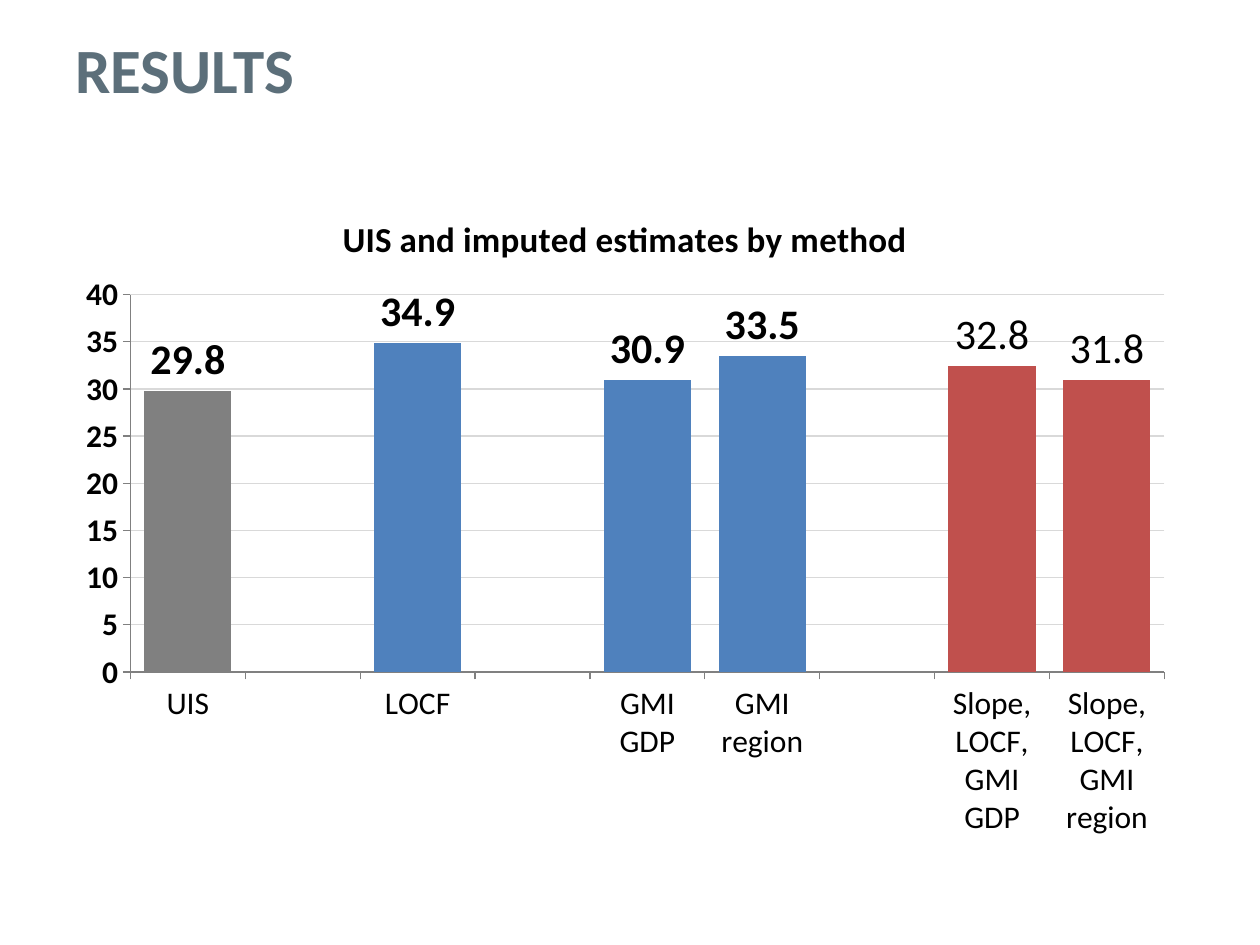
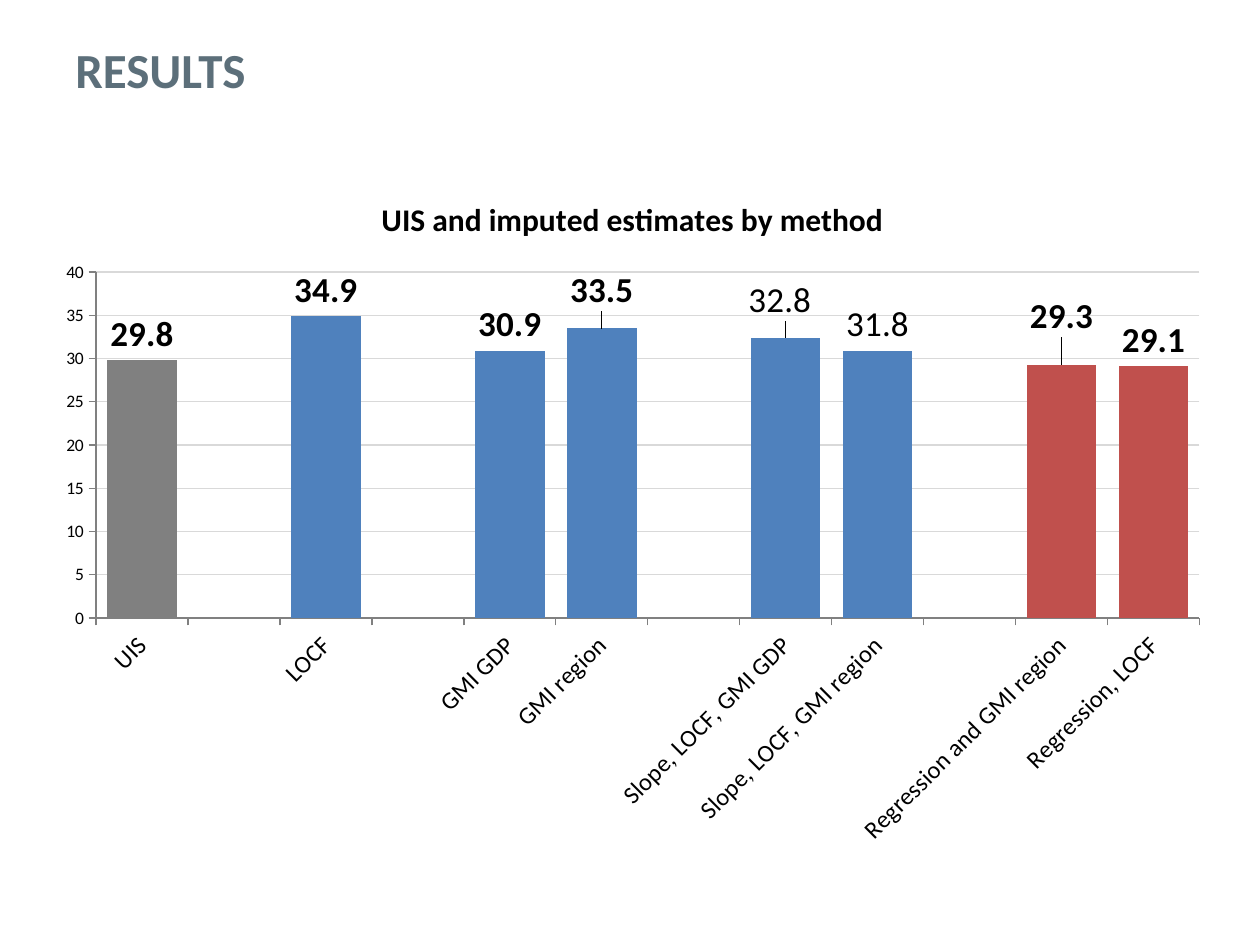
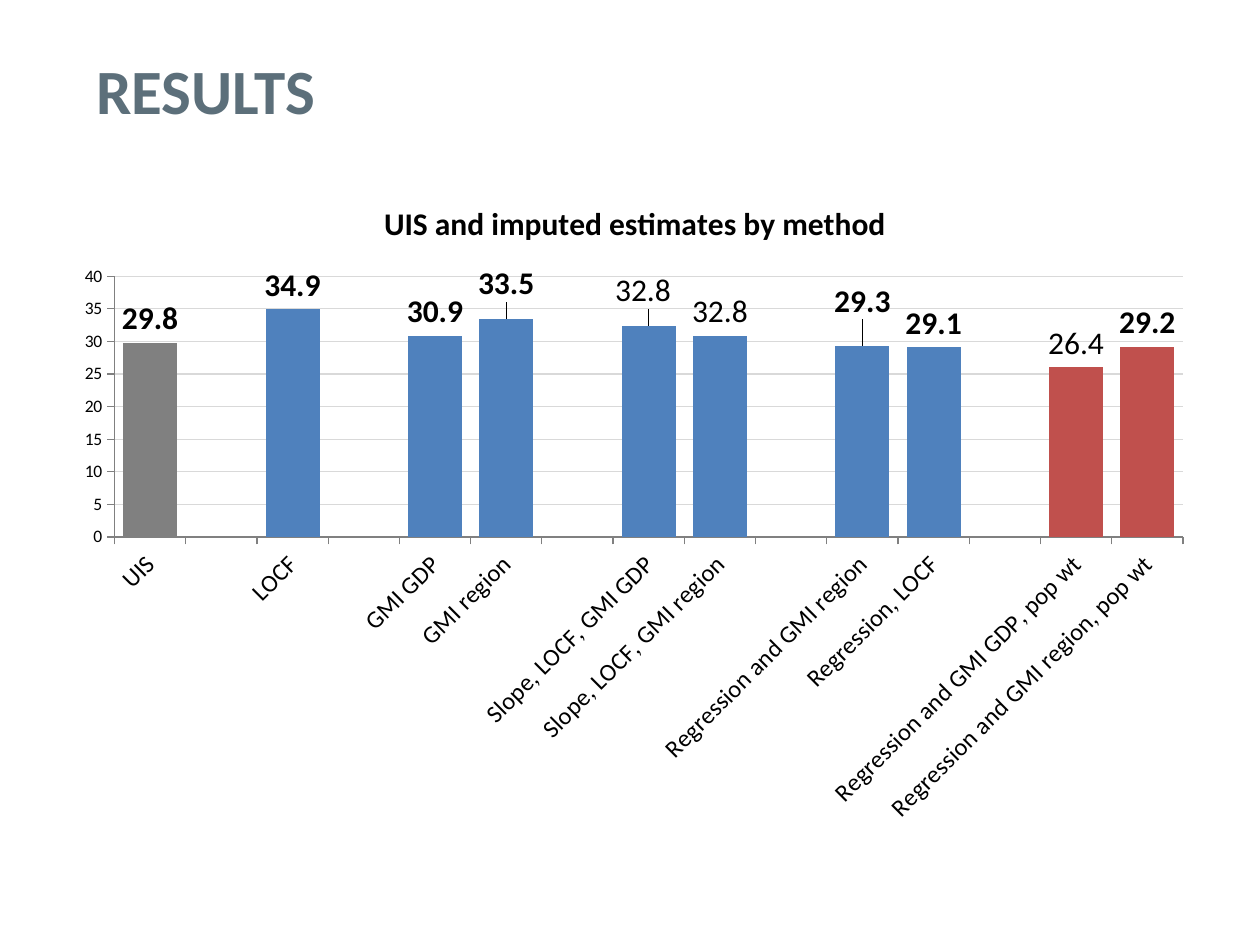
import dataclasses

import lxml.etree
import pptx
import pptx.chart.data
import pptx.dml.color
import pptx.enum.chart
import pptx.enum.text
import pptx.oxml.ns
import pptx.util


@dataclasses.dataclass(frozen=True)
class Theme:
    face: str = "Calibri"
    ink: str = "000000"
    head: str = "5C6F7A"
    grid: str = "D9D9D9"
    axis: str = "808080"
    base: str = "808080"
    bar: str = "4F81BD"
    new: str = "C0504D"
    small: int = 10
    cat: int = 14
    wide: int = 18
    big: int = 20
    mark: int = 24
    sub: int = 28
    top: int = 36


theme = Theme()
PX = 914400 / 126
RGB = pptx.dml.color.RGBColor.from_string


def style(font, size, bold=False, color=theme.ink):
    form = {"name": theme.face, "size": pptx.util.Pt(size), "bold": bold}
    for key, val in form.items():
        setattr(font, key, val)
    font.color.rgb = RGB(color)


def place(node, spot, form):
    """Insert a manual chart layout as child number spot of node."""
    qn = pptx.oxml.ns.qn
    for old in node.findall(qn("c:layout")):
        node.remove(old)
    outer = lxml.etree.Element(qn("c:layout"))
    inner = lxml.etree.SubElement(outer, qn("c:manualLayout"))
    for key, val in form.items():
        lxml.etree.SubElement(inner, qn(f"c:{key}")).set("val", str(val))
    node.insert(spot, outer)


bars = [
    ("UIS", 29.8), ("", None),
    ("LOCF", 34.9), ("", None),
    ("GMI GDP", 30.9), ("GMI region", 33.5), ("", None),
    ("Slope, LOCF, GMI GDP", 32.4), ("Slope, LOCF, GMI region", 30.9), ("", None),
    ("Regression and GMI region", 29.3), ("Regression, LOCF", 29.1), ("", None),
    ("Regression and GMI GDP, pop wt", 26), ("Regression and GMI region, pop wt", 29.2),
]
lifts = {5: (0, -0.017), 7: (-0.005, -0.017), 10: (0, -0.032)}

# box and plot are left, top, width, height in px
slides = [
    {"count": 9, "head": (63, 0), "size": theme.top, "box": (63, 188, 1124, 663),
     "plot": (130, 295, 1034, 377), "title": theme.big, "cat": theme.wide,
     "val": theme.wide, "bold": True, "mark": theme.mark, "turn": 0,
     "texts": {7: "32.8", 8: "31.8"}, "lifts": {}},
    {"count": 12, "head": (63, 0), "size": theme.sub, "box": (43, 171, 1179, 688),
     "plot": (96, 272, 1103, 346), "title": theme.wide, "cat": theme.cat,
     "val": theme.small, "bold": False, "mark": theme.big, "turn": -45,
     "texts": {7: "32.8", 8: "31.8"}, "lifts": lifts},
    {"count": 15, "head": (84, 21), "size": theme.top, "box": (63, 176, 1144, 660),
     "plot": (115, 276, 1069, 261), "title": theme.wide, "cat": theme.cat,
     "val": theme.small, "bold": False, "mark": theme.wide, "turn": -45,
     "texts": {7: "32.8", 8: "32.8", 13: "26.4"}, "lifts": lifts},
]

deck = pptx.Presentation()
deck.slide_width, deck.slide_height = round(1260 * PX), round(945 * PX)

for item in slides:
    slide = deck.slides.add_slide(deck.slide_layouts[6])

    # Heading
    area = [round(n * PX) for n in (*item["head"], 782, 137)]
    frame = slide.shapes.add_textbox(*area).text_frame
    frame.word_wrap = True
    frame.vertical_anchor = pptx.enum.text.MSO_ANCHOR.MIDDLE
    run = frame.paragraphs[0].add_run()
    run.text = "RESULTS"
    style(run.font, item["size"], True, theme.head)

    # Chart
    count = item["count"]
    data = pptx.chart.data.CategoryChartData()
    data.categories = [name for name, _ in bars[:count]]
    data.add_series("Series 1", [val for _, val in bars[:count]])
    kind = pptx.enum.chart.XL_CHART_TYPE.COLUMN_CLUSTERED
    area = [round(n * PX) for n in item["box"]]
    chart = slide.shapes.add_chart(kind, *area, data).chart
    style(chart.font, theme.small)
    chart.has_legend = False
    chart.has_title = True
    run = chart.chart_title.text_frame.paragraphs[0].add_run()
    run.text = "UIS and imputed estimates by method"
    style(run.font, item["title"], True)
    chart.chart_title.include_in_layout = False

    left, top, width, height = item["box"]
    x, y, w, h = item["plot"]
    place(chart.element.xpath(".//c:plotArea")[0], 0, {
        "layoutTarget": "inner", "xMode": "edge", "yMode": "edge",
        "x": round((x - left) / width, 3), "y": round((y - top) / height, 3),
        "w": round(w / width, 3), "h": round(h / height, 3)})

    # Axes
    cat, val = chart.category_axis, chart.value_axis
    for axis in (cat, val):
        axis.major_tick_mark = pptx.enum.chart.XL_TICK_MARK.OUTSIDE
        axis.format.line.color.rgb = RGB(theme.axis)
        axis.format.line.width = pptx.util.Pt(0.75)
    style(cat.tick_labels.font, item["cat"])
    style(val.tick_labels.font, item["val"], item["bold"])
    body = chart.element.xpath(".//c:catAx/c:txPr/a:bodyPr")[0]
    body.set("rot", str(item["turn"] * 60000))
    form = {"minimum_scale": 0, "maximum_scale": 40, "major_unit": 5,
            "has_major_gridlines": True}
    for key, num in form.items():
        setattr(val, key, num)
    line = val.major_gridlines.format.line
    line.color.rgb = RGB(theme.grid)
    line.width = pptx.util.Pt(0.75)

    # Bars: the first is the baseline, the last two are new
    plot = chart.plots[0]
    plot.gap_width = 32
    plot.vary_by_categories = False
    row = plot.series[0]
    row.invert_if_negative = False
    row.format.fill.solid()
    row.format.fill.fore_color.rgb = RGB(theme.bar)
    for spot, color in ((0, theme.base), (count - 2, theme.new), (count - 1, theme.new)):
        fill = row.points[spot].format.fill
        fill.solid()
        fill.fore_color.rgb = RGB(color)

    # Labels
    over = pptx.enum.chart.XL_LABEL_POSITION.OUTSIDE_END
    marks = row.data_labels
    marks.show_value = True
    marks.position = over
    style(marks.font, item["mark"], True)
    moves = {n: move for n, move in item["lifts"].items() if n < count}
    for spot in sorted({*item["texts"], *moves}):
        label = row.points[spot].data_label
        if spot in item["texts"]:
            run = label.text_frame.paragraphs[0].add_run()
            run.text = item["texts"][spot]
            style(run.font, item["mark"])
        else:
            style(label.font, item["mark"], True)
        label.position = over
        if spot in moves:
            node = chart.element.xpath(f'.//c:dLbl[c:idx/@val="{spot}"]')[0]
            place(node, 1, dict(zip("xy", moves[spot])))

deck.save("out.pptx")
